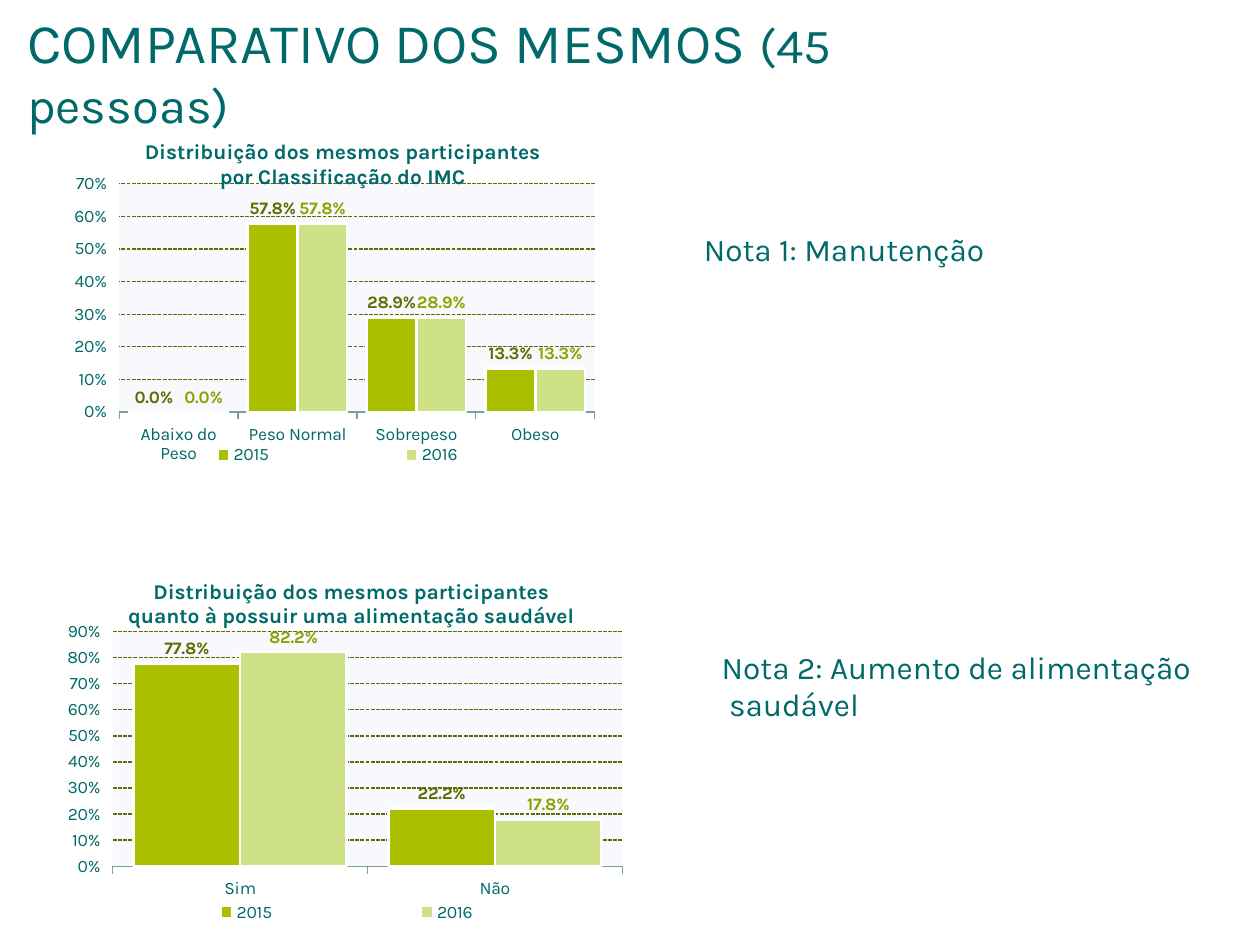
from dataclasses import dataclass

from lxml import etree
from pptx import Presentation
from pptx.chart.data import CategoryChartData
from pptx.dml.color import RGBColor
from pptx.enum.chart import XL_CHART_TYPE, XL_LABEL_POSITION, XL_LEGEND_POSITION, XL_TICK_MARK
from pptx.enum.dml import MSO_LINE
from pptx.enum.text import MSO_ANCHOR
from pptx.oxml import parse_xml
from pptx.oxml.ns import nsdecls, qn
from pptx.util import Cm, Pt


@dataclass(frozen=True)
class Theme:
    """Colours, font and type sizes of the slide."""
    font: str = "Karla"
    text: RGBColor = RGBColor.from_string("006969")
    grid: RGBColor = RGBColor.from_string("5F6C00")
    axis: RGBColor = RGBColor.from_string("7F9F9F")
    outline: RGBColor = RGBColor.from_string("FFFFFF")
    bars: tuple = (RGBColor.from_string("AABF00"), RGBColor.from_string("CFE187"))
    labels: tuple = (RGBColor.from_string("5F6C00"), RGBColor.from_string("8EA100"))
    plot_fill: str = "DCE6F2"
    heading_size: Pt = Pt(32)
    heading_detail_size: Pt = Pt(28)
    note_size: Pt = Pt(18)
    chart_title_size: Pt = Pt(12)
    chart_size: Pt = Pt(10)


THEME = Theme()


def style_font(font, size, color=THEME.text, bold=False):
    """Apply the theme typeface with a size, colour and weight."""
    font.name, font.size, font.bold = THEME.font, size, bold
    font.color.rgb = color


def add_text_frame(slide, box):
    """Add a wrapping text box and return its frame."""
    frame = slide.shapes.add_textbox(*map(Cm, box)).text_frame
    frame.word_wrap = True
    return frame


def add_heading(slide, box):
    """Place the slide heading with its smaller head count."""
    frame = add_text_frame(slide, box)
    frame.vertical_anchor = MSO_ANCHOR.MIDDLE
    paragraph = frame.paragraphs[0]
    style_font(paragraph.font, THEME.heading_size)
    paragraph.add_run().text = "COMPARATIVO DOS MESMOS "
    detail = paragraph.add_run()
    detail.text = "(45 pessoas)"
    detail.font.size = THEME.heading_detail_size


def add_note(slide, box, note):
    """Place one note beside its chart."""
    paragraph = add_text_frame(slide, box).paragraphs[0]
    paragraph.text = note
    style_font(paragraph.font, THEME.note_size)


def set_layout(element, index, inner=False, **fractions):
    """Give a chart part a manual layout in fractions of the chart."""
    for old in element.findall(qn("c:layout")):
        element.remove(old)
    layout = parse_xml(f"<c:layout {nsdecls('c')}><c:manualLayout/></c:layout>")
    settings = {"layoutTarget": "inner"} if inner else {}
    settings.update({f"{axis}Mode": "edge" for axis in "xy"})
    settings.update(fractions)
    for tag, value in settings.items():
        etree.SubElement(layout[0], qn(f"c:{tag}")).set("val", str(value))
    element.insert(index, layout)


def style_axes(chart, top):
    """Format both axes and the dashed gridlines."""
    category, value = chart.category_axis, chart.value_axis
    category.major_tick_mark = XL_TICK_MARK.OUTSIDE
    category.format.line.color.rgb = THEME.axis
    category.format.line.width = Pt(0.75)
    value.minimum_scale, value.maximum_scale, value.major_unit = 0, top, 0.1
    value.major_tick_mark = XL_TICK_MARK.OUTSIDE
    value.format.line.fill.background()
    value.tick_labels.number_format = "0%"
    value.tick_labels.number_format_is_linked = False
    grid = value.major_gridlines.format.line
    grid.color.rgb, grid.width = THEME.grid, Pt(0.75)
    grid.dash_style = MSO_LINE.SQUARE_DOT
    dash = value.major_gridlines._xAx.find(".//" + qn("a:prstDash"))
    dash.set("val", "sysDash")


def style_bars(plot):
    """Colour the two years and label their bars."""
    plot.gap_width, plot.overlap, plot.vary_by_categories = 39, 0, False
    for series, fill, label_color in zip(plot.series, THEME.bars, THEME.labels):
        series.invert_if_negative = False
        series.format.fill.solid()
        series.format.fill.fore_color.rgb = fill
        series.format.line.color.rgb = THEME.outline
        series.format.line.width = Pt(1.5)
        labels = series.data_labels
        labels.show_value = True
        labels.number_format, labels.number_format_is_linked = "0.0%", False
        labels.position = XL_LABEL_POSITION.OUTSIDE_END
        style_font(labels.font, THEME.chart_size, label_color, bold=True)


def add_comparison_chart(slide, box, title, title_at, legend_top, top, categories, by_year):
    """Place a column chart comparing both years."""
    data = CategoryChartData(number_format="0.0%")
    data.categories = categories
    for year, shares in by_year.items():
        data.add_series(year, shares)
    chart = slide.shapes.add_chart(XL_CHART_TYPE.COLUMN_CLUSTERED, *map(Cm, box), data).chart
    style_font(chart.font, THEME.chart_size)

    heading = chart.chart_title
    heading.text_frame.text = title
    style_font(heading.text_frame.paragraphs[0].font, THEME.chart_title_size, bold=True)
    heading.include_in_layout = False
    set_layout(heading._element, 1, x=title_at[0], y=title_at[1])

    chart.has_legend = True
    chart.legend.position = XL_LEGEND_POSITION.BOTTOM
    chart.legend.include_in_layout = False
    set_layout(chart.legend._element, 1, x=0.04, y=legend_top, w=0.92, h=0.08)

    style_axes(chart, top)
    style_bars(chart.plots[0])
    plot_area = chart._chartSpace.chart.plotArea
    set_layout(plot_area, 0, inner=True, x=0.1, y=0.19, w=0.87, h=0.64)
    plot_area.append(parse_xml(
        f'<c:spPr {nsdecls("c", "a")}><a:solidFill><a:srgbClr val="{THEME.plot_fill}">'
        '<a:alpha val="21000"/></a:srgbClr></a:solidFill><a:ln><a:noFill/></a:ln></c:spPr>'))


def main():
    """Build the comparison slide and save it."""
    deck = Presentation()
    deck.slide_width, deck.slide_height = Cm(25.4), Cm(19.05)
    slide = deck.slides.add_slide(deck.slide_layouts[6])
    add_heading(slide, (0.3, -0.08, 20.8, 3))
    add_note(slide, (13.94, 4.52, 10, 1.02), "Nota 1: Manutenção")
    add_note(slide, (14.3, 12.93, 10, 1.8), "Nota 2: Aumento de alimentação\v saudável")

    bmi_shares = (0, 0.578, 0.289, 0.133)
    add_comparison_chart(
        slide, (1.3, 2.34, 11.02, 7.19),
        "Distribuição dos mesmos participantes por Classificação do IMC",
        (0.14, 0.05), 0.91, 0.7,
        ("Abaixo do Peso", "Peso Normal", "Sobrepeso", "Obeso"),
        {"2015": bmi_shares, "2016": bmi_shares})
    add_comparison_chart(
        slide, (1.09, 11.33, 11.81, 7.39),
        "Distribuição dos mesmos participantes quanto à possuir uma alimentação saudável",
        (0.12, 0.03), 0.92, 0.9,
        ("Sim", "Não"),
        {"2015": (0.778, 0.222), "2016": (0.822, 0.178)})
    deck.save("out.pptx")


if __name__ == "__main__":
    main()
